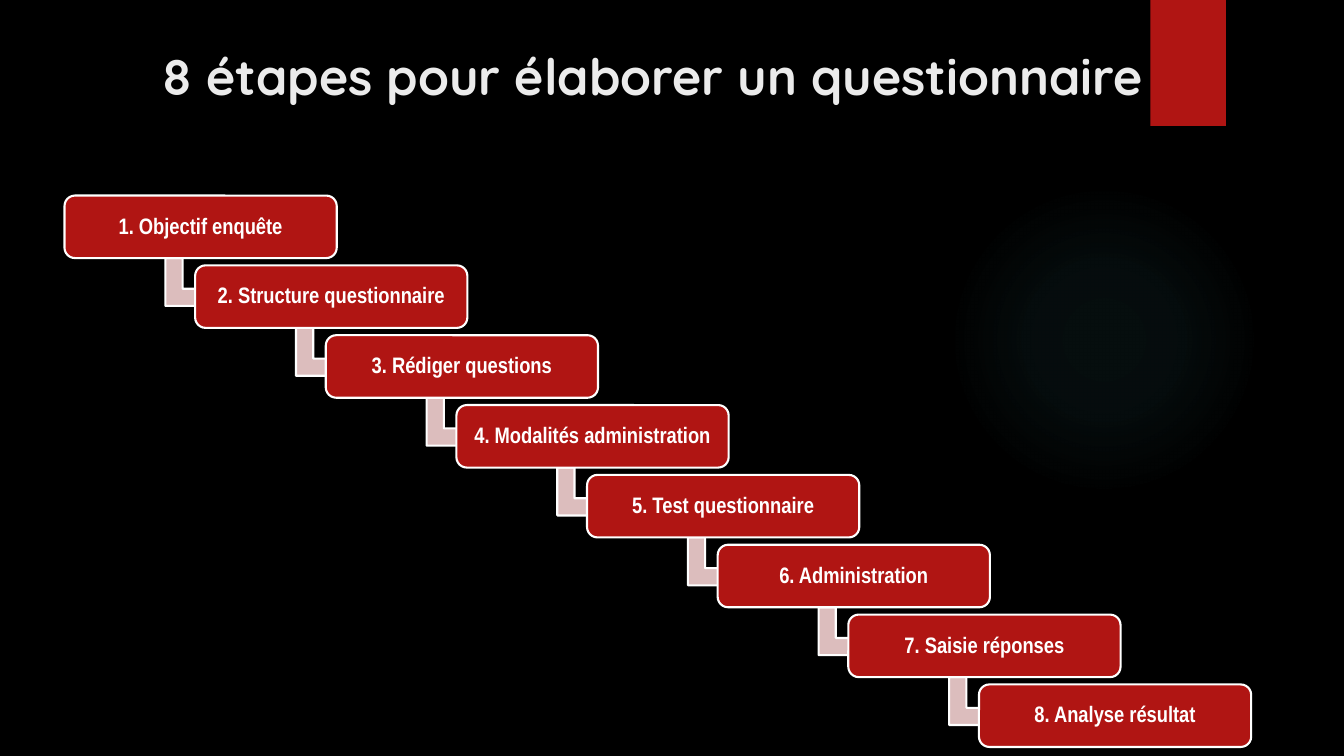
"""Build a slide showing the eight steps of a questionnaire as a staircase."""
from lxml import etree
from pptx import Presentation, util as u
from pptx.dml.color import RGBColor
from pptx.enum import shapes, text
from pptx.oxml import ns

TITLE = "8 étapes pour élaborer un questionnaire"
STEPS = [
    "Objectif enquête",
    "Structure questionnaire",
    "Rédiger questions",
    "Modalités administration",
    "Test questionnaire",
    "Administration",
    "Saisie réponses",
    "Analyse résultat",
]
WIDTH, HEIGHT = 13.33, 7.5
FIRST, LAST = (0.64, 1.94), (9.71, 6.79)
STEP_SIZE = (2.7, 0.62)
ARROW_OFFSET, ARROW_SIZE = (1.04, 0.58), (0.52, 0.6)
ARROW_ADJUSTMENTS = (0.328, 0.25, 0.358)
GLOW_STOPS = [(0, 7), (36, 6), (69, 0)]
RED, PINK, WHITE, GLOW = "B01513", "DCBDBD", "FFFFFF", "50B9C1"


def color(value):
    return RGBColor.from_string(value)


def add_shape(slide, kind, position, size, fill, line=None):
    shape = slide.shapes.add_shape(kind, *map(u.Inches, position + size))
    shape.shadow.inherit = False
    shape.fill.solid()
    shape.fill.fore_color.rgb = color(fill)
    if line:
        shape.line.color.rgb = color(line)
        shape.line.width = u.Pt(1.5)
    else:
        shape.line.fill.background()
    return shape


def format_text(frame, font_name, size, font_color):
    paragraph = frame.paragraphs[0]
    paragraph.alignment = text.PP_ALIGN.CENTER
    font = paragraph.runs[0].font
    font.name, font.size, font.bold = font_name, u.Pt(size), True
    font.color.rgb = color(font_color)
    return paragraph


def add_glow(slide):
    glow = add_shape(slide, shapes.MSO_SHAPE.OVAL, (9.41, 1.83), (3.08, 3.08), GLOW)
    stops = "".join(
        f'<a:gs pos="{position * 1000}"><a:srgbClr val="{GLOW}">'
        f'<a:alpha val="{alpha * 1000}"/></a:srgbClr></a:gs>'
        for position, alpha in GLOW_STOPS
    )
    gradient = etree.fromstring(
        f'<a:gradFill {ns.nsdecls("a")}><a:gsLst>{stops}</a:gsLst><a:path path="circle">'
        '<a:fillToRect l="50000" t="50000" r="50000" b="50000"/></a:path></a:gradFill>'
    )
    properties = glow.element.spPr
    properties.replace(properties.find(ns.qn("a:solidFill")), gradient)


def add_title(slide):
    title = slide.shapes.title
    title.left, title.top, title.width, title.height = map(u.Inches, (0.53, 0.4, 11.89, 0.82))
    frame = title.text_frame
    frame.text = TITLE
    frame.vertical_anchor = text.MSO_ANCHOR.TOP
    format_text(frame, "Quicksand", 36, "EBEBEB")


def add_arrow(slide, step_position):
    position = tuple(start + offset for start, offset in zip(step_position, ARROW_OFFSET))
    arrow = add_shape(slide, shapes.MSO_SHAPE.BENT_UP_ARROW, position, ARROW_SIZE, PINK, WHITE)
    arrow.rotation = 90
    for index, value in enumerate(ARROW_ADJUSTMENTS):
        arrow.adjustments[index] = value


def add_step(slide, position, label):
    step = add_shape(slide, shapes.MSO_SHAPE.ROUNDED_RECTANGLE, position, STEP_SIZE, RED, WHITE)
    frame = step.text_frame
    frame.text = label
    frame.word_wrap = True
    frame.vertical_anchor = text.MSO_ANCHOR.MIDDLE
    frame.margin_left = frame.margin_right = u.Inches(0.07)
    frame.margin_top = frame.margin_bottom = u.Inches(0.07)
    format_text(frame, "Arial Narrow", 16, WHITE).line_spacing = 0.9


def main():
    presentation = Presentation()
    presentation.slide_width = u.Inches(WIDTH)
    presentation.slide_height = u.Inches(HEIGHT)
    slide = presentation.slides.add_slide(presentation.slide_layouts[5])
    slide.background.fill.solid()
    slide.background.fill.fore_color.rgb = color("000000")

    add_glow(slide)
    add_shape(slide, shapes.MSO_SHAPE.RECTANGLE, (11.41, 0), (0.75, 1.25), RED)
    add_title(slide)

    last_index = len(STEPS) - 1
    for index, label in enumerate(STEPS):
        position = tuple(
            start + (end - start) * index / last_index for start, end in zip(FIRST, LAST)
        )
        if index < last_index:
            add_arrow(slide, position)
        add_step(slide, position, f"{index + 1}. {label}")

    presentation.save("out.pptx")


if __name__ == "__main__":
    main()
